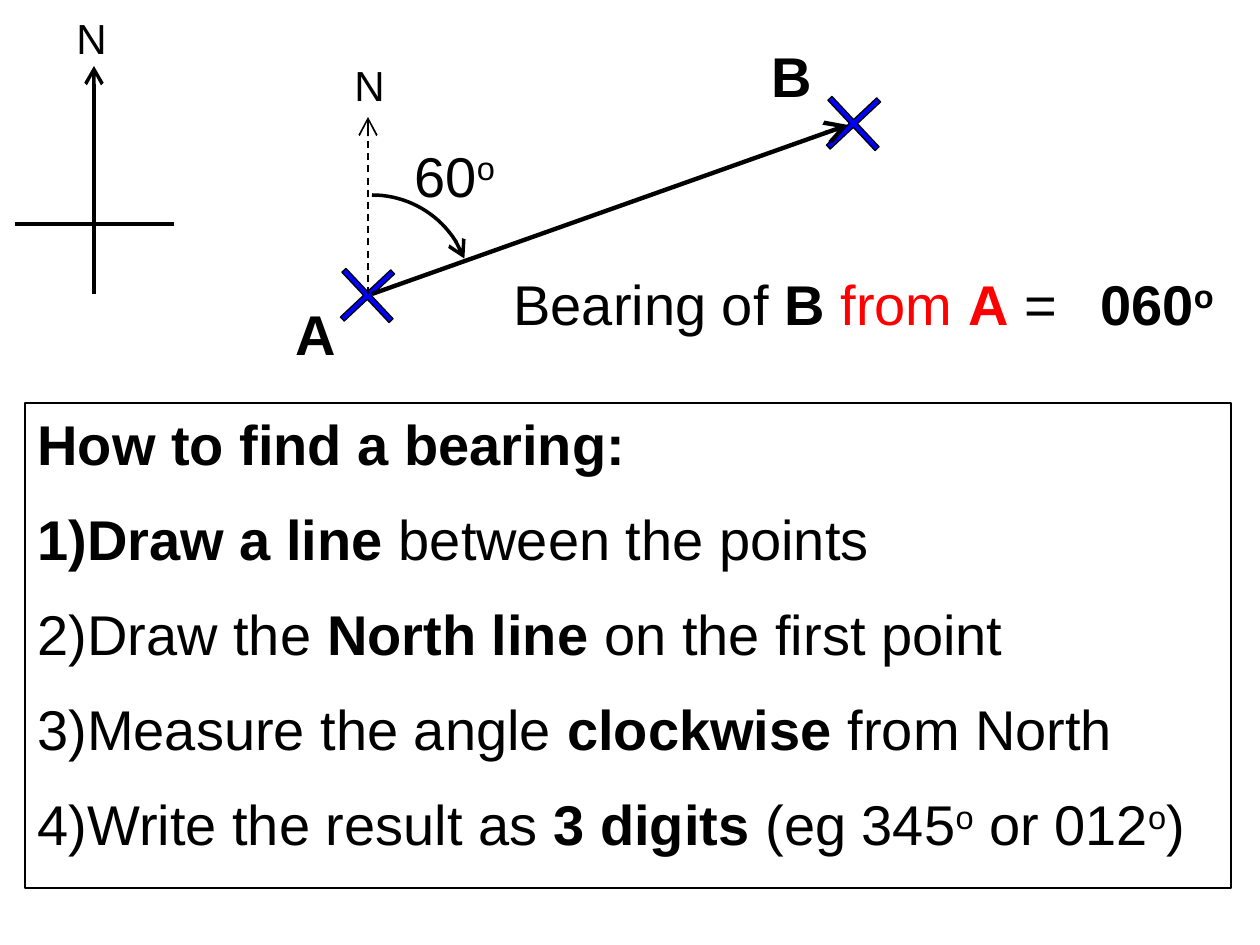
import math

import pptx
import pptx.dml.color
import pptx.enum.dml
import pptx.enum.shapes
import pptx.enum.text
import pptx.oxml.ns
import pptx.util
from lxml import etree

EMU_PER_PX = 914400 / 126
COLORS = {"ink": "000000", "point": "0000FF", "from": "FF0000"}
FONT = "Arial"
PLAIN, BOLD, RAISED = {}, {"bold": True}, {"raised": True}


def px(length):
    return pptx.util.Emu(round(length * EMU_PER_PX))


def rgb(name):
    return pptx.dml.color.RGBColor.from_string(COLORS[name])


def add_child(parent, tag, **attributes):
    return etree.SubElement(parent, pptx.oxml.ns.qn(tag), attributes)


def style_line(mark, width, arrow=False):
    mark.line.color.rgb = rgb("ink")
    mark.line.width = pptx.util.Pt(width)
    if arrow:
        add_child(mark.line._get_or_add_ln(), "a:tailEnd",
                  type="arrow", w="lg", len="lg")


def add_line(slide, start, end, width, arrow=False, dashed=False):
    line = slide.shapes.add_connector(
        pptx.enum.shapes.MSO_CONNECTOR.STRAIGHT,
        *(px(value) for value in (*start, *end)))
    line.line.color.rgb = rgb("ink")
    if dashed:
        line.line.dash_style = pptx.enum.dml.MSO_LINE.DASH
    style_line(line, width, arrow)
    add_child(line._element.spPr, "a:effectLst")


def add_runs(paragraph, runs, size):
    for text, style in runs:
        run = paragraph.add_run()
        run.text = text
        run.font.name = FONT
        run.font.size = pptx.util.Pt(size)
        run.font.bold = style.get("bold", False)
        run.font.color.rgb = rgb(style.get("color", "ink"))
        if style.get("raised"):
            run.font._element.set("baseline", "30000")


def add_label(slide, box, runs, size=32, align=pptx.enum.text.PP_ALIGN.LEFT):
    label = slide.shapes.add_textbox(*map(px, box))
    frame = label.text_frame
    frame.word_wrap = True
    paragraph = frame.paragraphs[0]
    paragraph.alignment = align
    add_runs(paragraph, runs, size)


def add_north_label(slide, left, top):
    add_label(slide, (left, top, 59, 63), [("N", PLAIN)], size=24)


def add_point(slide, left, top):
    cross = slide.shapes.add_shape(
        pptx.enum.shapes.MSO_SHAPE.CROSS, px(left), px(top), px(69), px(69))
    cross.adjustments[0] = 0.46
    cross.rotation = 46.9
    cross.shadow.inherit = False
    cross.fill.solid()
    cross.fill.fore_color.rgb = rgb("point")
    style_line(cross, 0.75)


def add_angle_arc(slide, center, radius, sweep):
    points = [
        (px(center[0] + radius * math.sin(math.radians(angle))),
         px(center[1] - radius * math.cos(math.radians(angle))))
        for angle in range(0, sweep + 1, 3)]
    builder = slide.shapes.build_freeform(*points[0])
    builder.add_line_segments(points[1:], close=False)
    arc = builder.convert_to_shape()
    arc.shadow.inherit = False
    arc.fill.background()
    style_line(arc, 2, arrow=True)


def draw_compass(slide, left, top, width, height):
    middle = left + width // 2
    add_line(slide, (left, top + 218), (left + width, top + 218), 2)
    add_line(slide, (middle, top + height), (middle, top + 60), 2, arrow=True)
    add_north_label(slide, left + 49, top)


def draw_bearing_diagram(slide, left, top):
    add_point(slide, left + 51, top + 226)
    add_line(slide, (left + 86, top + 259), (left + 86, top + 82), 1,
             arrow=True, dashed=True)
    add_point(slide, left + 537, top + 54)
    origin = (left + 90, top + 259)
    add_line(slide, origin, (left + 566, top + 90), 2.5, arrow=True)
    add_angle_arc(slide, origin, radius=99, sweep=69)
    labels = [
        (1, 258, [("A", BOLD)]),
        (477, 0, [("B", BOLD)]),
        (120, 100, [("60", PLAIN), ("o", RAISED)]),
    ]
    for x, y, runs in labels:
        add_label(slide, (left + x, top + y, 110, 79), runs)
    add_north_label(slide, left + 60, top + 18)


def draw_steps(slide, left, top, width, height):
    steps = [
        [("How to find a bearing:", BOLD)],
        [("Draw a line", BOLD), (" between the points", PLAIN)],
        [("Draw the ", PLAIN), ("North line", BOLD),
         (" on the first point", PLAIN)],
        [("Measure the angle ", PLAIN), ("clockwise", BOLD),
         (" from North", PLAIN)],
        [("Write the result as ", PLAIN), ("3 digits", BOLD),
         (" (eg 345", PLAIN), ("o", RAISED), (" or 012", PLAIN),
         ("o", RAISED), (")", PLAIN)],
    ]
    panel = slide.shapes.add_shape(
        pptx.enum.shapes.MSO_SHAPE.RECTANGLE,
        *map(px, (left, top, width, height)))
    panel.shadow.inherit = False
    panel.fill.background()
    style_line(panel, 0.75)
    frame = panel.text_frame
    frame.word_wrap = True
    frame.vertical_anchor = pptx.enum.text.MSO_ANCHOR.TOP
    for index, runs in enumerate(steps):
        paragraph = frame.add_paragraph() if index else frame.paragraphs[0]
        paragraph.alignment = pptx.enum.text.PP_ALIGN.LEFT
        properties = paragraph._p.get_or_add_pPr()
        properties.set("marL", str(px(48)))
        properties.set("indent", str(-px(48)))
        if index:
            paragraph.space_before = pptx.util.Pt(16)
            add_child(properties, "a:buFont", typeface=FONT)
            add_child(properties, "a:buAutoNum", type="arabicParenR")
        add_runs(paragraph, runs, 32)


def draw_result(slide, left, top, width, height):
    statement = [
        ("Bearing of ", PLAIN),
        ("B ", BOLD),
        ("from ", {"color": "from"}),
        ("A", {"color": "from", "bold": True}),
        (" =", PLAIN),
    ]
    add_label(slide, (left, top, 625, height), statement)
    answer = [("060", BOLD), ("o", {"bold": True, "raised": True})]
    add_label(slide, (left + width - 169, top, 169, height), answer,
              align=pptx.enum.text.PP_ALIGN.RIGHT)


def main():
    presentation = pptx.Presentation()
    presentation.slide_width = px(1260)
    presentation.slide_height = px(945)
    slide = presentation.slides.add_slide(presentation.slide_layouts[6])
    draw_compass(slide, 15, 6, 159, 288)
    draw_bearing_diagram(slide, 282, 35)
    draw_steps(slide, 25, 403, 1206, 485)
    draw_result(slide, 501, 263, 725, 81)
    presentation.save("out.pptx")


if __name__ == "__main__":
    main()
